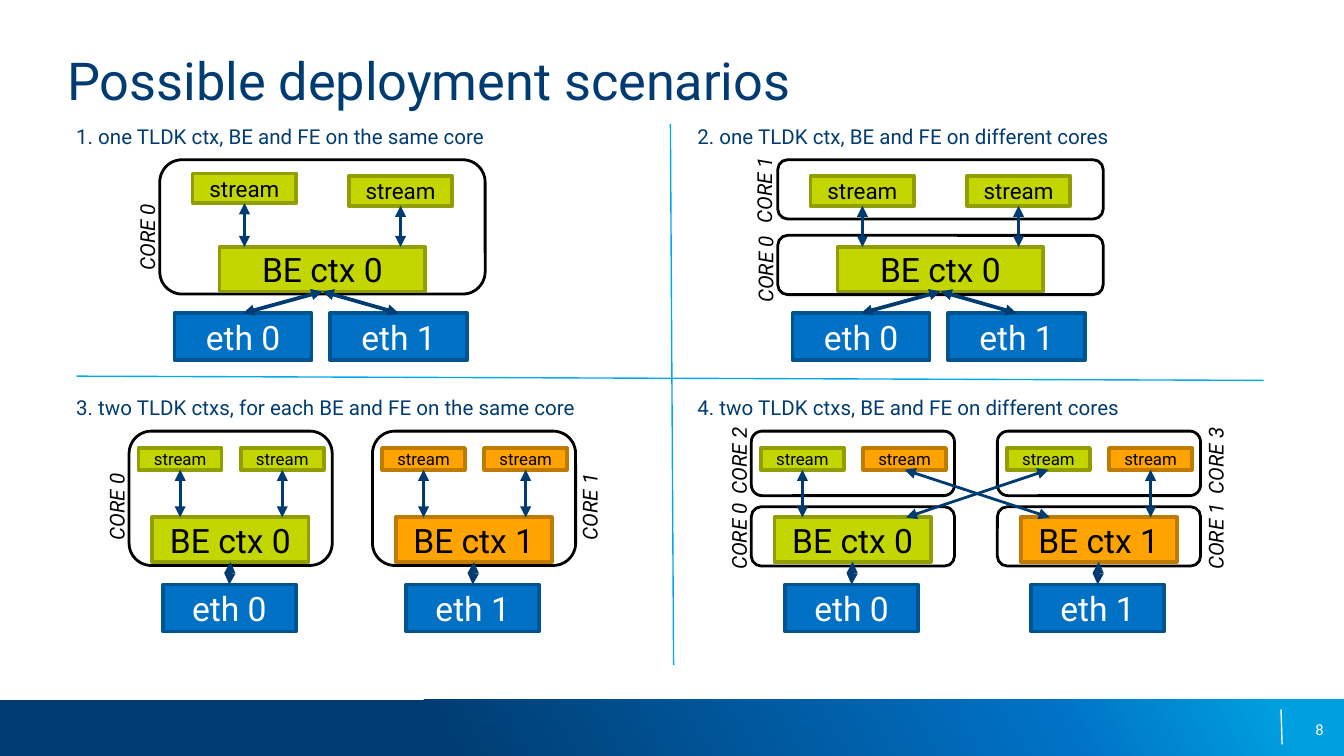
from copy import deepcopy
from itertools import product
from pptx import Presentation
from pptx.dml.color import RGBColor
from pptx.enum.shapes import MSO_CONNECTOR as Connector, MSO_SHAPE as Shape
from pptx.enum.text import MSO_ANCHOR as Anchor, PP_ALIGN as Align
from pptx.oxml.ns import qn
from pptx.util import Cm, Pt
from lxml.etree import SubElement

NAVY = RGBColor(0x00, 0x3C, 0x71)
BLUE = RGBColor(0x00, 0x71, 0xC5)
BLUE_EDGE = RGBColor(0x00, 0x54, 0x92)
CYAN = RGBColor(0x00, 0x9F, 0xDF)
RULE = RGBColor(0x00, 0xAA, 0xEA)
LIME = RGBColor(0xC3, 0xD6, 0x00)
LIME_EDGE = RGBColor(0x90, 0x9E, 0x00)
ORANGE = RGBColor(0xFF, 0xA3, 0x00)
ORANGE_EDGE = RGBColor(0xBF, 0x7A, 0x00)
BLACK = RGBColor(0x00, 0x00, 0x00)
WHITE = RGBColor(0xFF, 0xFF, 0xFF)

ETH = (BLUE, BLUE_EDGE, WHITE)
FIRST = (LIME, LIME_EDGE, BLACK)
SECOND = (ORANGE, ORANGE_EDGE, BLACK)


class Sketch:
    font = "Roboto"

    def __init__(self, page):
        self.page = page

    def set_text(self, box, words, size, color, align=Align.LEFT, anchor=Anchor.MIDDLE, wrap=True):
        frame = box.text_frame
        frame.margin_left = frame.margin_right = frame.margin_top = frame.margin_bottom = 0
        frame.word_wrap = wrap
        frame.vertical_anchor = anchor
        para = frame.paragraphs[0]
        para.text = words
        para.alignment = align
        para.font.name = self.font
        para.font.size = Pt(size)
        para.font.color.rgb = color
        return para

    def label(self, words, x, y, w, h, size, color, **style):
        box = self.page.shapes.add_textbox(Cm(x), Cm(y), Cm(w), Cm(h))
        self.set_text(box, words, size, color, **style)

    def caption(self, words, x, y):
        self.label(words, x, y, 9.78, 0.48, 11, NAVY, anchor=Anchor.TOP)

    def core_label(self, words, x, y, h):
        box = self.page.shapes.add_textbox(Cm(x), Cm(y), Cm(0.48), Cm(h))
        para = self.set_text(box, words, 11, BLACK, align=Align.CENTER, wrap=False)
        para.font.italic = True
        box.text_frame._txBody.bodyPr.set("vert", "vert270")

    def shape(self, kind, x, y, w, h):
        shape = self.page.shapes.add_shape(kind, Cm(x), Cm(y), Cm(w), Cm(h))
        shape.shadow.inherit = False
        return shape

    def core(self, x, y, w, h):
        band = self.shape(Shape.ROUNDED_RECTANGLE, x, y, w, h)
        band.fill.solid()
        band.fill.fore_color.rgb = WHITE
        band.line.color.rgb = BLACK
        band.line.width = Pt(1.5)

    def block(self, words, x, y, w, h, colors, size=18):
        fill, edge, ink = colors
        block = self.shape(Shape.RECTANGLE, x, y, w, h)
        block.fill.solid()
        block.fill.fore_color.rgb = fill
        block.line.color.rgb = edge
        block.line.width = Pt(2)
        self.set_text(block, words, size, ink, align=Align.CENTER)
        return block

    def gradient_bar(self, x, y, w, h, stops, angle):
        bar = self.shape(Shape.RECTANGLE, x, y, w, h)
        bar.line.fill.background()
        bar.fill.gradient()
        bar.fill.gradient_angle = angle
        stop_list = bar._element.spPr.find(".//" + qn("a:gsLst"))
        stop_list.append(deepcopy(stop_list[0]))
        for stop, (position, color) in zip(bar.fill.gradient_stops, stops):
            stop.position = position
            stop.color.rgb = color

    def line(self, x1, y1, x2, y2, color, width=0.75):
        line = self.page.shapes.add_connector(Connector.STRAIGHT, x1, y1, x2, y2)
        line.line.color.rgb = color
        line.line.width = Pt(width)
        SubElement(line._element.spPr, qn("a:effectLst"))
        return line

    def arrow(self, upper, lower, width, end_x=None):
        start_x = upper.left + upper.width // 2
        end_x = start_x if end_x is None else end_x
        arrow = self.line(start_x, upper.top + upper.height, end_x, lower.top, NAVY, width)
        arrow.begin_connect(upper, 2)
        outline = arrow.line._get_or_add_ln()
        for end in ("a:headEnd", "a:tailEnd"):
            SubElement(outline, qn(end), type="triangle")
        return arrow

    def link(self, upper, lower):
        middle = lower.left + lower.width // 2
        self.arrow(upper, lower, 2, middle).end_connect(lower, 0)

    def wide_scenario(self, x, bands, stream_tops):
        for y, h in bands:
            self.core(x, y, 6.15, h)
        context = self.block("BE ctx 0", x + 1.13, 4.67, 3.89, 0.84, FIRST)
        for offset, y in zip((0.62, 3.57), stream_tops):
            stream = self.block("stream", x + offset, y, 1.96, 0.56, FIRST, 12)
            self.arrow(stream, context, 1.5)
        for number, offset in enumerate((0.28, 3.22)):
            port = self.block(f"eth {number}", x + offset, 5.92, 2.59, 0.89, ETH)
            self.link(context, port)

    def narrow_scenario(self, number, x, bands, stream_colors):
        for y, h in bands:
            self.core(x, y, 3.84, h)
        context = self.block(f"BE ctx {number}", x + 0.44, 9.78, 2.95, 0.84, (FIRST, SECOND)[number])
        streams = [
            self.block("stream", x + offset, 8.47, 1.57, 0.41, colors, 9)
            for offset, colors in zip((0.18, 2.11), stream_colors)
        ]
        port = self.block(f"eth {number}", x + 0.64, 11.05, 2.51, 0.89, ETH)
        self.link(context, port)
        return context, streams


def main():
    deck = Presentation()
    deck.slide_width = Cm(25.4)
    deck.slide_height = Cm(14.29)
    sketch = Sketch(deck.slides.add_slide(deck.slide_layouts[6]))

    sketch.gradient_bar(0, 13.23, 25.4, 1.06, ((0.32, NAVY), (0.78, BLUE), (0.95, CYAN)), 29)
    sketch.line(Cm(24.21), Cm(13.41), Cm(24.23), Cm(14.07), WHITE)
    sketch.label("8", 19.1, 13.41, 5.92, 0.76, 8, WHITE, align=Align.RIGHT)
    sketch.label("Possible deployment scenarios", 1.27, 0.86, 22.86, 1.3, 28, NAVY)
    sketch.line(Cm(12.67), Cm(2.34), Cm(12.73), Cm(12.57), RULE)
    sketch.line(Cm(1.45), Cm(7.11), Cm(23.88), Cm(7.19), RULE)

    captions = (
        "1. one TLDK ctx, BE and FE on the same core",
        "2. one TLDK ctx, BE and FE on different cores",
        "3. two TLDK ctxs, for each BE and FE on the same core",
        "4. two TLDK ctxs, BE and FE on different cores",
    )
    for words, (y, x) in zip(captions, product((2.35, 7.47), (1.44, 13.18))):
        sketch.caption(words, x, y)

    sketch.wide_scenario(3.02, [(3.02, 2.54)], (3.28, 3.33))
    sketch.wide_scenario(14.7, [(3.02, 1.12), (4.45, 1.12)], (3.33, 3.33))

    for number, (x, colors) in enumerate(((2.44, FIRST), (7.04, SECOND))):
        context, streams = sketch.narrow_scenario(number, x, [(8.15, 2.54)], (colors, colors))
        for stream in streams:
            sketch.arrow(stream, context, 1.5)

    split = [(8.15, 1.22), (9.58, 1.12)]
    left, left_streams = sketch.narrow_scenario(0, 14.2, split, (FIRST, SECOND))
    right, right_streams = sketch.narrow_scenario(1, 18.85, split, (FIRST, SECOND))
    sketch.arrow(left_streams[0], left, 1.5)
    sketch.arrow(right_streams[1], right, 1.5)
    sketch.arrow(left_streams[1], right, 1.5, Cm(19.84))
    sketch.arrow(right_streams[0], left, 1.5, Cm(17.12))

    for number, x, y, h in (
        (0, 2.54, 3.38, 2.21),
        (1, 14.2, 2.87, 1.45),
        (0, 14.22, 4.37, 1.45),
        (0, 1.96, 8.48, 2.21),
        (1, 10.9, 8.48, 2.21),
        (2, 13.72, 8.05, 1.32),
        (0, 13.72, 9.48, 1.32),
        (3, 22.73, 8.05, 1.32),
        (1, 22.73, 9.48, 1.32),
    ):
        sketch.core_label(f"CORE {number}", x, y, h)

    deck.save("out.pptx")


if __name__ == "__main__":
    main()
